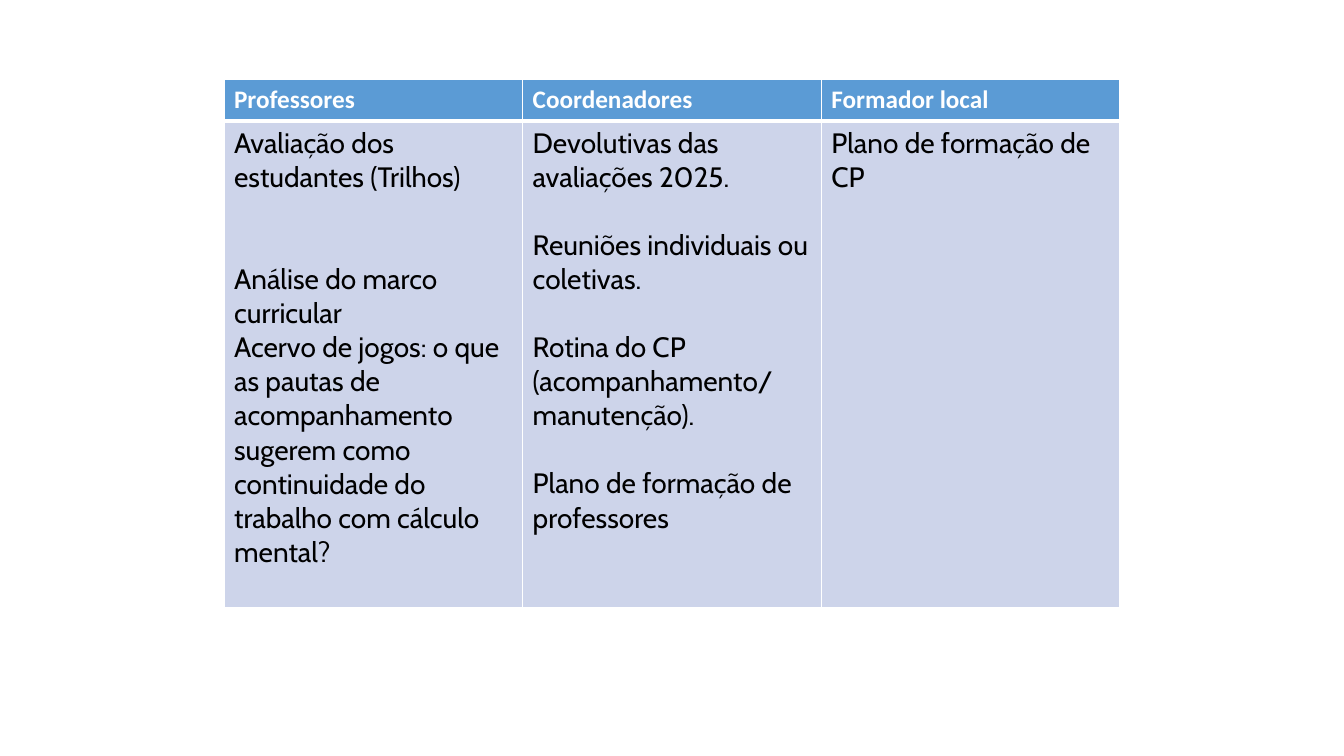
from pptx import Presentation
from pptx.dml.color import RGBColor
from pptx.oxml import parse_xml
from pptx.oxml.ns import nsdecls
from pptx.util import Inches, Pt

WHITE = RGBColor(0xFF, 0xFF, 0xFF)
BLACK = RGBColor(0x00, 0x00, 0x00)
HEADER_BLUE = RGBColor(0x5B, 0x9B, 0xD5)
BODY_LILAC = RGBColor(0xCD, 0xD4, 0xEA)

SLIDE_W, SLIDE_H = Inches(13.33), Inches(7.5)
BLANK_LINE = 24.3  # height of one body text line, in points

HEADER = {
    "fill": HEADER_BLUE,
    "font": {"name": "Calibri", "size": Pt(18), "bold": True},
    "color": WHITE,
    "borders": {"L": 1, "R": 1, "T": 1, "B": 3},
}
BODY = {
    "fill": BODY_LILAC,
    "font": {"name": "Cabin", "size": Pt(20), "bold": False},
    "color": BLACK,
    "borders": {"L": 1, "R": 1, "T": 3, "B": 1},
}

# Each audience has a list of (task, lines of space before it)
TASKS = {
    "Professores": [
        ("Avaliação dos estudantes (Trilhos)", 0),
        ("Análise do marco curricular", 2),
        ("Acervo de jogos: o que as pautas de acompanhamento sugerem como "
         "continuidade do trabalho com cálculo mental?", 0),
    ],
    "Coordenadores": [
        ("Devolutivas das avaliações 2025.", 0),
        ("Reuniões individuais ou coletivas.", 1),
        ("Rotina do CP (acompanhamento/", 1),
        ("manutenção).", 0),
        ("Plano de formação de professores", 1),
    ],
    "Formador local": [("Plano de formação de CP", 0)],
}


def draw_borders(cell, widths):
    """Add white borders, which must come before the fill in the cell."""
    properties = cell._tc.get_or_add_tcPr()
    for position, (side, points) in enumerate(widths.items()):
        properties.insert(position, parse_xml(
            f'<a:ln{side} {nsdecls("a")} w="{Pt(points)}"><a:solidFill>'
            f'<a:srgbClr val="{WHITE}"/></a:solidFill></a:ln{side}>'))


def fill_cell(cell, entries, style):
    """Write the entries into a cell and apply its style."""
    cell.fill.solid()
    cell.fill.fore_color.rgb = style["fill"]
    draw_borders(cell, style["borders"])
    frame = cell.text_frame
    for index, (text, gap) in enumerate(entries):
        entry = frame.add_paragraph() if index else frame.paragraphs[0]
        if gap:
            entry.space_before = Pt(gap * BLANK_LINE)
        run = entry.add_run()
        run.text = text
        for attribute, value in style["font"].items():
            setattr(run.font, attribute, value)
        run.font.color.rgb = style["color"]


def add_task_table(slide, left, top, width, height):
    """One column per audience: a header row above its tasks."""
    table = slide.shapes.add_table(2, len(TASKS), left, top, width, height).table
    table.rows[0].height = Inches(0.41)
    table.rows[1].height = height - table.rows[0].height
    for column, (audience, tasks) in enumerate(TASKS.items()):
        table.columns[column].width = width // len(TASKS)
        fill_cell(table.cell(0, column), [(audience, 0)], HEADER)
        fill_cell(table.cell(1, column), tasks, BODY)


def main():
    deck = Presentation()
    deck.slide_width, deck.slide_height = SLIDE_W, SLIDE_H
    slide = deck.slides.add_slide(deck.slide_layouts[6])
    # Table spans the middle two thirds of the slide
    add_task_table(slide, SLIDE_W // 6, Inches(0.79),
                   SLIDE_W * 2 // 3, Inches(5.24))
    deck.save("out.pptx")


if __name__ == "__main__":
    main()
